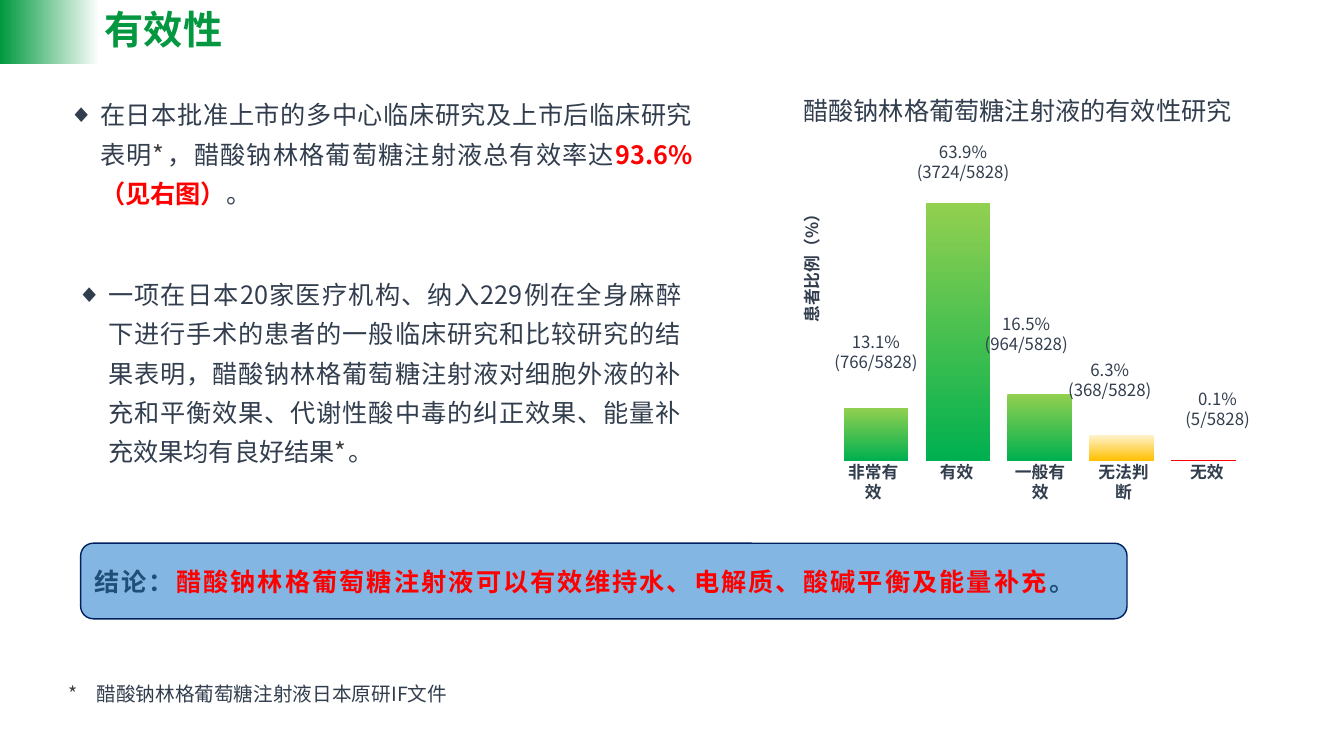
from lxml import etree
from pptx import Presentation
from pptx.chart.data import CategoryChartData
from pptx.dml.color import RGBColor
from pptx.enum.chart import XL_CHART_TYPE as CT
from pptx.enum.shapes import MSO_SHAPE
from pptx.enum.text import MSO_ANCHOR, MSO_AUTO_SIZE, PP_ALIGN as AL
from pptx.oxml import parse_xml
from pptx.oxml.ns import nsdecls, qn
from pptx.util import Pt

WHITE = RGBColor(0xFF, 0xFF, 0xFF)
BRAND = RGBColor(0x00, 0x99, 0x3E)
TITLE = RGBColor(0x03, 0x98, 0x40)
TEXT = RGBColor(0x32, 0x3E, 0x4E)
GREY = RGBColor(0x40, 0x40, 0x40)
RED = RGBColor(0xFF, 0x00, 0x00)
NAVY = RGBColor(0x00, 0x20, 0x60)
BLUE = RGBColor(0x1F, 0x4E, 0x79)
SKY = RGBColor(0x83, 0xB6, 0xE2)
LIME = RGBColor(0x92, 0xD0, 0x50)
GREEN = RGBColor(0x00, 0xB0, 0x50)
CREAM = RGBColor(0xFF, 0xF2, 0xCC)
AMBER = RGBColor(0xFF, 0xC0, 0x00)
CJK = "Noto Sans CJK SC"
STAR = ("*", {"color": GREY, "spc": 150})

RESULTS = [
    ("非常有效", 0.131, "766/5828", (LIME, GREEN), (81.4, 168.5)),
    ("有效", 0.639, "3724/5828", (LIME, GREEN), (143.6, 33.1)),
    ("一般有效", 0.165, "964/5828", (LIME, GREEN), (188.7, 155.5)),
    ("无法判断", 0.063, "368/5828", (CREAM, AMBER), (248.4, 188.6)),
    ("无效", 0.001, "5/5828", (RED,), (325.4, 209.5)),
]


def paint(fill, colors, angle):
    """Fill with one solid colour or a two-stop gradient."""
    if len(colors) == 1:
        fill.solid()
        fill.fore_color.rgb = colors[0]
        return
    fill.gradient()
    fill.gradient_angle = angle
    for stop, color in zip(fill.gradient_stops, colors):
        stop.color.rgb = color


def move(sp, x, y, w, h):
    """Place a shape, in points."""
    for name, value in {"left": x, "top": y, "width": w, "height": h}.items():
        setattr(sp, name, Pt(value))


def frame(sp, anchor=MSO_ANCHOR.TOP):
    """Prepare a wrapping text frame of fixed size."""
    tf = sp.text_frame
    for name, value in {"word_wrap": True, "auto_size": MSO_AUTO_SIZE.NONE,
                        "vertical_anchor": anchor}.items():
        setattr(tf, name, value)
    return tf


def write(p, runs, align=AL.LEFT, size=18, color=TEXT, bold=False, font=CJK, spc=0):
    """Write (text, overrides) runs into a paragraph."""
    p.alignment = align
    for text, changes in runs:
        fmt = {"size": size, "color": color, "bold": bold, "spc": spc, **changes}
        r = p.add_run()
        r.text = text
        for name, value in {"size": Pt(fmt["size"]), "bold": fmt["bold"], "name": font}.items():
            setattr(r.font, name, value)
        r.font.color.rgb = fmt["color"]
        rPr = r.font._element
        rPr.set("spc", str(fmt["spc"]))
        ea = etree.Element(qn("a:ea"), typeface=CJK)
        rPr.find(qn("a:latin")).addnext(ea)


def hang(p, indent):
    """Give a paragraph a hanging indent, in points."""
    pPr = p._p.get_or_add_pPr()
    pPr.set("marL", str(Pt(indent)))
    pPr.set("indent", str(-Pt(indent)))
    return pPr


def label(s, box, lines, **fmt):
    """Add a text box with one paragraph per line."""
    sp = s.shapes.add_textbox(*map(Pt, box))
    tf = frame(sp)
    for i, line in enumerate(lines):
        p = tf.add_paragraph() if i else tf.paragraphs[0]
        write(p, [(line, {})], **fmt)
    return sp


def add_header(s, x, y, w, h):
    """Add the gradient strip and the title beside it."""
    sp = s.shapes.add_shape(MSO_SHAPE.RECTANGLE, Pt(x), Pt(y), Pt(71.3), Pt(h))
    sp.shadow.inherit = False
    paint(sp.fill, (WHITE, BRAND), 180)
    sp.line.fill.background()
    title = s.shapes.title
    move(title, x + 67.7, y, w - 67.7, h - 0.7)
    p = frame(title, MSO_ANCHOR.MIDDLE).paragraphs[0]
    p.line_spacing = 0.9
    write(p, [("有效性", {})], size=28, color=TITLE, bold=True)


def add_finding(sp, box, runs):
    """Fill a body placeholder with one bulleted finding."""
    move(sp, *box)
    p = frame(sp).paragraphs[0]
    pPr = hang(p, 22.5)
    for tag, key, value in (("a:buFont", "typeface", "Arial"), ("a:buChar", "char", "◆")):
        etree.SubElement(pPr, qn(tag)).set(key, value)
    for name, value in {"line_spacing": 1.3, "space_before": Pt(0), "space_after": Pt(0)}.items():
        setattr(p, name, value)
    write(p, runs, AL.JUSTIFY)


def add_columns(s, x, y, w, h):
    """Add the clustered columns, one series per result."""
    data = CategoryChartData(number_format="0.0%")
    data.categories = ["1"]
    for name, share, *_ in RESULTS:
        data.add_series(name, [share])
    chart = s.shapes.add_chart(CT.COLUMN_CLUSTERED, Pt(x), Pt(y), Pt(w), Pt(h), data).chart
    for name, value in {"has_legend": False, "has_title": False}.items():
        setattr(chart, name, value)
    for name, value in {"size": Pt(10), "name": "Calibri"}.items():
        setattr(chart.font, name, value)
    chart.font.color.rgb = TEXT
    for axis in (chart.category_axis, chart.value_axis):
        axis.has_major_gridlines = False
        axis.visible = False
    chart.value_axis.minimum_scale = 0
    chart.value_axis.maximum_scale = 0.7
    chart.value_axis.tick_labels.number_format = "0.00%"
    chart.value_axis.tick_labels.number_format_is_linked = False
    plot = chart.plots[0]
    for name, value in {"gap_width": 219, "overlap": -27, "vary_by_categories": False}.items():
        setattr(plot, name, value)
    for series, result in zip(plot.series, RESULTS):
        paint(series.format.fill, result[3], 270)
    area = chart._chartSpace.chart.plotArea
    for old in area.findall(qn("c:layout")):
        area.remove(old)
    places = {"x": 0.02, "y": 0.02, "w": 0.96, "h": 0.96}
    area.insert(0, parse_xml(
        f'<c:layout {nsdecls("c")}><c:manualLayout><c:layoutTarget val="inner"/>'
        '<c:xMode val="edge"/><c:yMode val="edge"/>'
        + "".join(f'<c:{k} val="{v}"/>' for k, v in places.items())
        + "</c:manualLayout></c:layout>"))


def add_study(s, x, y, w, h):
    """Add the study chart with its heading and labels."""
    add_columns(s, x, y + 58.3, w, h - 58.3)
    label(s, (x + 3.6, y, 357.8, 31), ["醋酸钠林格葡萄糖注射液的有效性研究"], align=AL.CENTER)
    axis = label(s, (x + 24.5, y + 45.4, 26.6, 157), ["患者比例（%）"],
                 align=AL.CENTER, size=12, bold=True)
    axis.text_frame._txBody.bodyPr.set("vert", "vert270")
    for i, (name, share, count, _, (cx, top)) in enumerate(RESULTS):
        label(s, (x + 51.8 + 59.6 * i, y + 261.4, 55.4, 54.7), [name],
              align=AL.CENTER, size=12, bold=True)
        label(s, (x + cx - 43, y + top, 86, 36), [f"{share:.1%}", f"({count})"],
              align=AL.CENTER, size=12)


def add_conclusion(s, x, y, w, h):
    """Add the rounded conclusion bar."""
    sp = s.shapes.add_shape(MSO_SHAPE.ROUNDED_RECTANGLE, Pt(x), Pt(y), Pt(w), Pt(h))
    sp.shadow.inherit = False
    paint(sp.fill, (SKY,), 0)
    sp.line.color.rgb = NAVY
    sp.line.width = Pt(1)
    runs = [("结论：", {}),
            ("醋酸钠林格葡萄糖注射液可以有效维持水、电解质、酸碱平衡及能量补充", {"color": RED}),
            ("。", {})]
    write(frame(sp, MSO_ANCHOR.MIDDLE).paragraphs[0], runs, AL.JUSTIFY,
          color=BLUE, bold=True, font="Arial", spc=150)


def add_footnote(s, x, y, w, h):
    """Add the source note."""
    p = frame(s.shapes.add_textbox(Pt(x), Pt(y), Pt(w), Pt(h))).paragraphs[0]
    hang(p, 20)
    write(p, [STAR, ("\t醋酸钠林格葡萄糖注射液日本原研IF文件", {})], size=14)


def main():
    """Build and save the slide."""
    prs = Presentation()
    prs.slide_width, prs.slide_height = Pt(960), Pt(540)
    s = prs.slides.add_slide(prs.slide_layouts[3])
    add_header(s, 0, 0, 280, 46)
    add_finding(s.placeholders[1], (41.8, 61.2, 460, 99.4), [
        ("在日本批准上市的多中心临床研究及上市后临床研究表明", {}), STAR,
        ("，醋酸钠林格葡萄糖注射液总有效率达", {}),
        ("93.6%（见右图）", {"color": RED, "bold": True}), ("。", {})])
    add_finding(s.placeholders[2], (47.5, 189.4, 446.4, 159.8), [
        ("一项在日本20家医疗机构、纳入229例在全身麻醉下进行手术的患者的一般临床研究和比较研究的结果表明，"
         "醋酸钠林格葡萄糖注射液对细胞外液的补充和平衡效果、代谢性酸中毒的纠正效果、能量补充效果均有良好结果", {}),
        STAR, ("。", {})])
    add_study(s, 544.3, 64.8, 396.7, 268.5)
    add_conclusion(s, 57.6, 388, 747.4, 54)
    add_footnote(s, 41.8, 483.8, 901.4, 24.5)
    prs.save("out.pptx")


if __name__ == "__main__":
    main()
